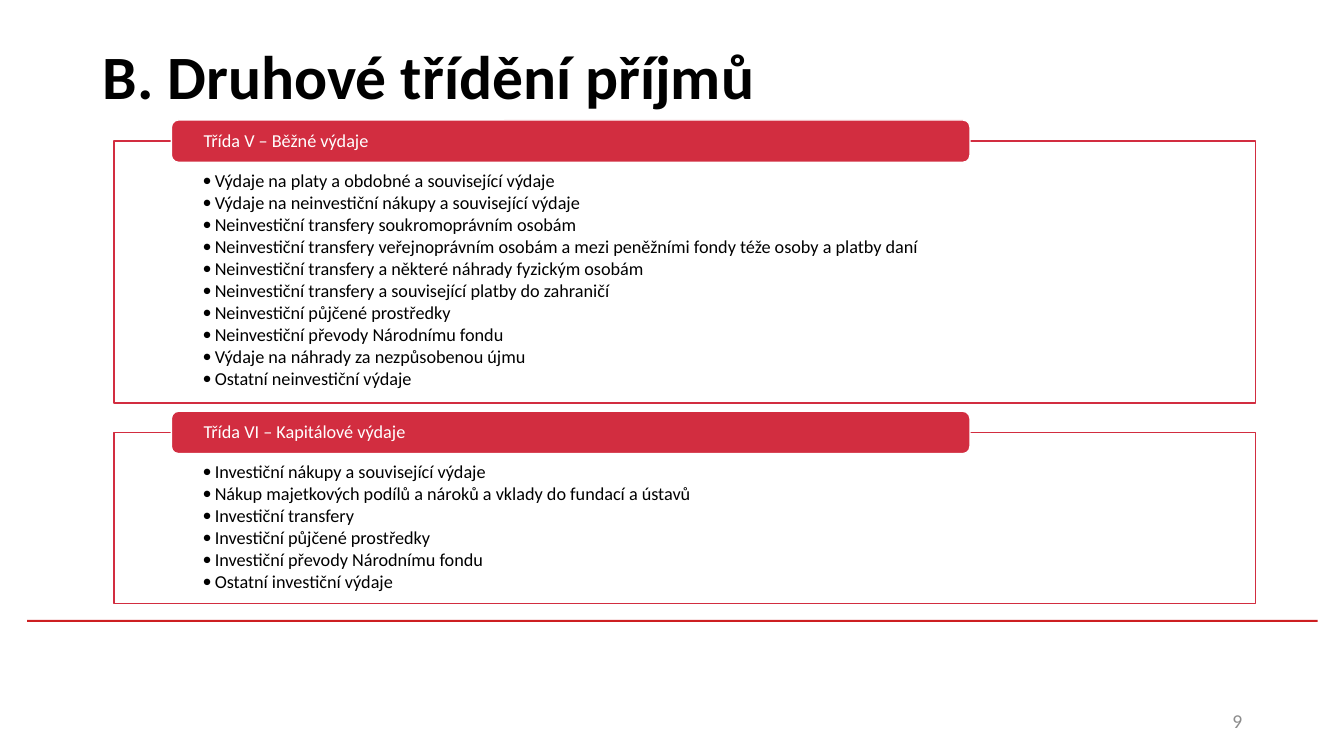
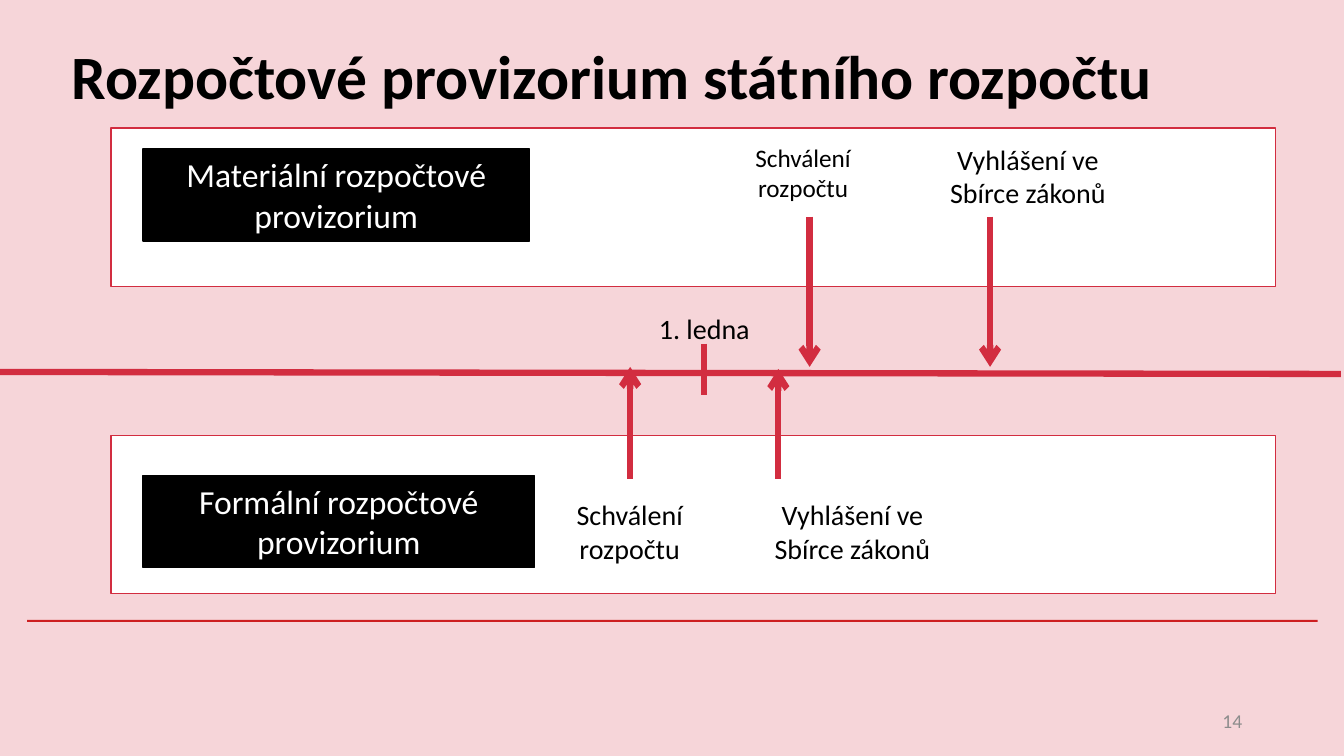
"""Build two budget slides: classes of expenditure and the provisional budget timeline."""
from dataclasses import dataclass

from lxml import etree
from pptx import Presentation
from pptx.dml.color import RGBColor
from pptx.enum.shapes import MSO_CONNECTOR, MSO_SHAPE
from pptx.enum.text import MSO_ANCHOR, MSO_AUTO_SIZE, PP_ALIGN
from pptx.oxml.ns import qn
from pptx.shapes.autoshape import Shape
from pptx.slide import Slide
from pptx.text.text import TextFrame
from pptx.util import Emu, Pt

RECT, ROUNDED = MSO_SHAPE.RECTANGLE, MSO_SHAPE.ROUNDED_RECTANGLE
STRAIGHT = MSO_CONNECTOR.STRAIGHT
TOP, MIDDLE = MSO_ANCHOR.TOP, MSO_ANCHOR.MIDDLE
LEFT, CENTER, RIGHT = PP_ALIGN.LEFT, PP_ALIGN.CENTER, PP_ALIGN.RIGHT
FIXED = MSO_AUTO_SIZE.NONE

RED = RGBColor(0xD2, 0x2D, 0x40)
RULE_RED = RGBColor(0xCD, 0x1F, 0x21)
PINK = RGBColor(0xF6, 0xD5, 0xD9)
GRAY = RGBColor(0x8C, 0x8C, 0x8C)
WHITE = RGBColor(0xFF, 0xFF, 0xFF)
BLACK = RGBColor(0, 0, 0)

FONT = "Calibri"
EMU_PER_PX = 9144
TITLE_ONLY = 5


def px(length: int) -> Emu:
    """Turn px, at 100 to the inch, into EMU."""
    return Emu(length * EMU_PER_PX)


@dataclass(frozen=True)
class Box:
    """A rectangle on the slide, in px."""

    left: int
    top: int
    width: int
    height: int

    def emu(self) -> tuple[Emu, Emu, Emu, Emu]:
        """Give the rectangle in EMU."""
        return px(self.left), px(self.top), px(self.width), px(self.height)


@dataclass(frozen=True)
class ExpenseClass:
    """A class of expenditure with its items."""

    heading: str
    top: int
    height: int
    items: tuple[str, ...]


@dataclass(frozen=True)
class Provisorium:
    """A kind of provisional budget, with its panel and label."""

    label: str
    panel_top: int
    label_box: Box


@dataclass(frozen=True)
class Milestone:
    """A caption on the timeline and the stroke that marks it."""

    caption: str
    box: Box
    size: int
    x: int
    start: int
    end: int
    arrow: bool = True


EXPENSE_CLASSES = (
    ExpenseClass("Třída V – Běžné výdaje", 140, 260, (
        "Výdaje na platy a obdobné a související výdaje",
        "Výdaje na neinvestiční nákupy a související výdaje",
        "Neinvestiční transfery soukromoprávním osobám",
        "Neinvestiční transfery veřejnoprávním osobám a mezi peněžními fondy téže osoby a platby daní",
        "Neinvestiční transfery a některé náhrady fyzickým osobám",
        "Neinvestiční transfery a související platby do zahraničí",
        "Neinvestiční půjčené prostředky",
        "Neinvestiční převody Národnímu fondu",
        "Výdaje na náhrady za nezpůsobenou újmu",
        "Ostatní neinvestiční výdaje",
    )),
    ExpenseClass("Třída VI – Kapitálové výdaje", 429, 170, (
        "Investiční nákupy a související výdaje",
        "Nákup majetkových podílů a nároků a vklady do fundací a ústavů",
        "Investiční transfery",
        "Investiční půjčené prostředky",
        "Investiční převody Národnímu fondu",
        "Ostatní investiční výdaje",
    )),
)

PROVISORIA = (
    Provisorium("Materiální rozpočtové provizorium", 127, Box(142, 148, 383, 91)),
    Provisorium("Formální rozpočtové provizorium", 432, Box(142, 472, 388, 91)),
)

APPROVAL = "Schválení rozpočtu"
PUBLICATION = "Vyhlášení ve Sbírce zákonů"
MILESTONES = (
    Milestone("1. ledna", Box(604, 304, 189, 44), 20, 698, 341, 392, arrow=False),
    Milestone(APPROVAL, Box(697, 136, 199, 71), 18, 803, 215, 364),
    Milestone(PUBLICATION, Box(920, 136, 199, 77), 20, 982, 215, 364),
    Milestone(APPROVAL, Box(525, 489, 199, 77), 20, 625, 475, 364),
    Milestone(PUBLICATION, Box(746, 489, 199, 77), 20, 772, 475, 366),
)


def style_text(frame: TextFrame, size: int, color: RGBColor, align: PP_ALIGN = LEFT,
               anchor: MSO_ANCHOR = TOP, bold: bool = False) -> None:
    """Format all the text of a frame."""
    frame.word_wrap = True
    frame.auto_size = FIXED
    frame.vertical_anchor = anchor
    for paragraph in frame.paragraphs:
        paragraph.alignment = align
        for run in paragraph.runs:
            run.font.name = FONT
            run.font.size = Pt(size)
            run.font.bold = bold
            run.font.color.rgb = color


def set_margins(frame: TextFrame, side: int, top: int, bottom: int) -> None:
    """Set the inner margins of a frame."""
    frame.margin_left = frame.margin_right = px(side)
    frame.margin_top, frame.margin_bottom = px(top), px(bottom)


def add_block(slide: Slide, box: Box, fill: RGBColor, outline: RGBColor | None = None,
              outer_form: MSO_SHAPE = RECT) -> Shape:
    """Add a filled shape, outlined if a colour is given."""
    block = slide.shapes.add_shape(outer_form, *box.emu())
    block.shadow.inherit = False
    block.fill.solid()
    block.fill.fore_color.rgb = fill
    if outline is None:
        block.line.fill.background()
    else:
        block.line.color.rgb = outline
        block.line.width = Pt(1)
    return block


def add_caption(slide: Slide, text: str, box: Box, size: int, color: RGBColor,
                align: PP_ALIGN, anchor: MSO_ANCHOR = TOP) -> None:
    """Add a plain text box."""
    frame = slide.shapes.add_textbox(*box.emu()).text_frame
    frame.text = text
    style_text(frame, size, color, align, anchor)


def add_stroke(slide: Slide, start: tuple[int, int], end: tuple[int, int],
               arrow: bool = False) -> None:
    """Add a thick red line, with an arrowhead at its end if wanted."""
    stroke = slide.shapes.add_connector(STRAIGHT, *map(px, start + end))
    stroke.line.color.rgb = RED
    stroke.line.width = Pt(4.5)
    if arrow:
        etree.SubElement(stroke.line._get_or_add_ln(), qn("a:tailEnd"), type="arrow")
    etree.SubElement(stroke._element.spPr, qn("a:effectLst"))


def add_base(deck: Presentation, title: str, title_box: Box, number: int,
             background: RGBColor) -> Slide:
    """Add a slide with its background, title, footer rule and number."""
    slide = deck.slides.add_slide(deck.slide_layouts[TITLE_ONLY])
    slide.background.fill.solid()
    slide.background.fill.fore_color.rgb = background
    add_block(slide, Box(27, 615, 1280, 2), RULE_RED)
    heading = slide.shapes.title
    heading.left, heading.top, heading.width, heading.height = title_box.emu()
    heading.text_frame.text = title
    style_text(heading.text_frame, 44, BLACK, anchor=MIDDLE, bold=True)
    add_caption(slide, str(number), Box(942, 695, 300, 40), 14, GRAY, RIGHT, MIDDLE)
    return slide


def add_expense_class(slide: Slide, expense: ExpenseClass) -> None:
    """Draw the bulleted panel of a class and the heading on its upper edge."""
    panel = add_block(slide, Box(113, expense.top, 1132, expense.height), WHITE, RED)
    items = panel.text_frame
    items.text = "\n".join(expense.items)
    set_margins(items, 88, 30, 10)
    for paragraph in items.paragraphs:
        properties = paragraph._p.get_or_add_pPr()
        properties.set("marL", str(px(12)))
        properties.set("indent", str(px(-12)))
        etree.SubElement(properties, qn("a:buFont"), typeface=FONT)
        etree.SubElement(properties, qn("a:buChar"), char="•")
        paragraph.line_spacing = 0.9
        paragraph.space_after = Pt(1.7)
    style_text(items, 13, BLACK)

    header = add_block(slide, Box(170, expense.top - 21, 792, 42), RED, WHITE, ROUNDED)
    header.text_frame.text = expense.heading
    set_margins(header.text_frame, 30, 0, 0)
    header.text_frame.paragraphs[0].line_spacing = 0.9
    style_text(header.text_frame, 13, WHITE, anchor=MIDDLE)


def build_classes(deck: Presentation) -> None:
    """Build the slide of expenditure classes."""
    slide = add_base(deck, "B. Druhové třídění příjmů", Box(92, 2, 1150, 145), 9, WHITE)
    for expense in EXPENSE_CLASSES:
        add_expense_class(slide, expense)


def build_timeline(deck: Presentation) -> None:
    """Build the slide of the provisional budget timeline."""
    slide = add_base(deck, "Rozpočtové provizorium státního rozpočtu",
                     Box(61, 2, 1245, 145), 14, PINK)
    for provisorium in PROVISORIA:
        add_block(slide, Box(110, provisorium.panel_top, 1155, 157), WHITE, RED)
        label = add_block(slide, provisorium.label_box, BLACK, BLACK)
        label.text_frame.text = provisorium.label
        style_text(label.text_frame, 24, WHITE, CENTER)
    for milestone in MILESTONES:
        add_stroke(slide, (milestone.x, milestone.start), (milestone.x, milestone.end),
                   milestone.arrow)
        add_caption(slide, milestone.caption, milestone.box, milestone.size, BLACK, CENTER)
    add_stroke(slide, (-3, 369), (1330, 371))


def main() -> None:
    """Build and save the presentation."""
    deck = Presentation()
    deck.slide_width, deck.slide_height = px(1333), px(750)
    build_classes(deck)
    build_timeline(deck)
    deck.save("out.pptx")


if __name__ == "__main__":
    main()
